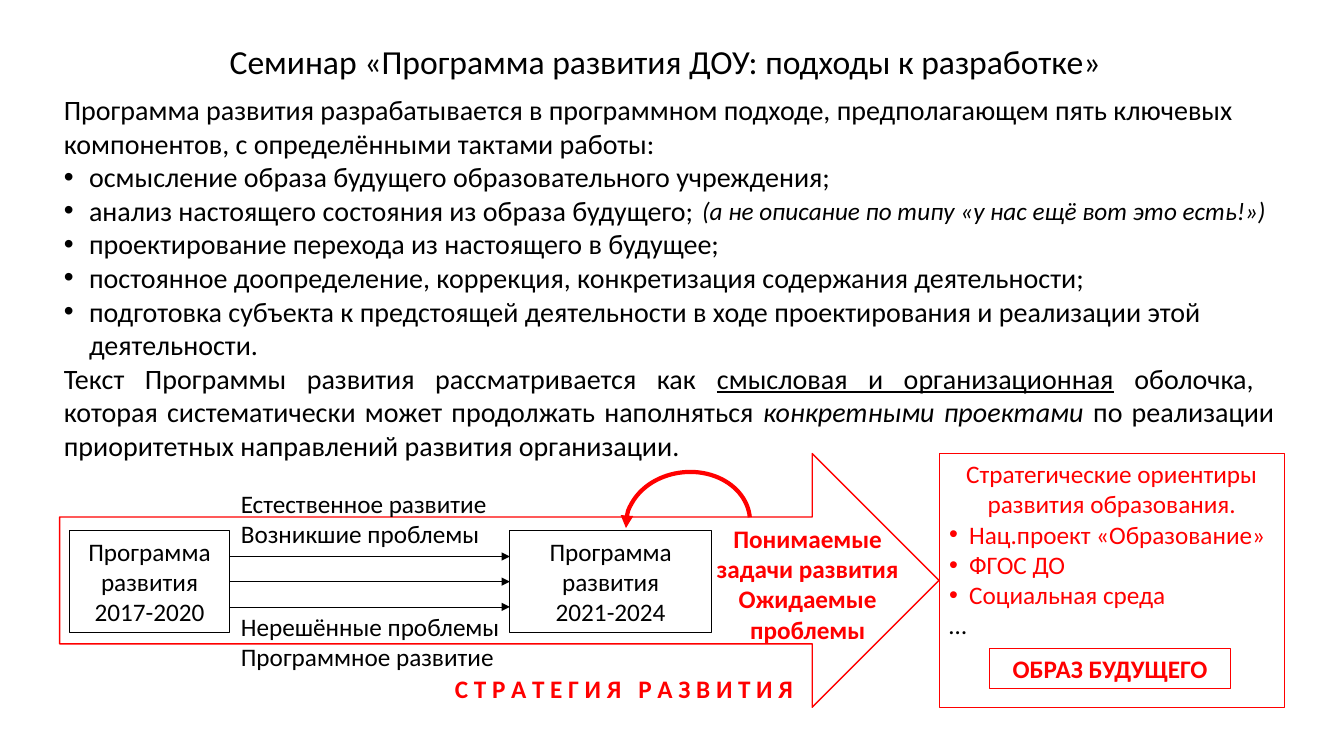
from dataclasses import dataclass

from pptx import Presentation
from pptx.dml.color import RGBColor
from pptx.enum.shapes import MSO_CONNECTOR as Connector, MSO_SHAPE as Preset
from pptx.enum.text import MSO_ANCHOR as Anchor, MSO_AUTO_SIZE as AutoSize, PP_ALIGN as Align
from pptx.oxml.ns import qn
from pptx.util import Inches, Pt
from lxml.etree import SubElement

WIDTH, HEIGHT = Inches(13.33), Inches(7.5)
COLUMNS, ROWS = 160, 90
RIGHT_SIDE, LEFT_SIDE = 3, 1


@dataclass(frozen=True)
class Theme:
    font: str = "Calibri"
    ink: RGBColor = RGBColor(0, 0, 0)
    accent: RGBColor = RGBColor(255, 0, 0)
    title: Pt = Pt(24)
    body: Pt = Pt(20)
    label: Pt = Pt(18)


THEME = Theme()
TITLE = dict(size=THEME.title, color=THEME.ink)
BODY = dict(size=THEME.body, color=THEME.ink)
LABEL = dict(size=THEME.label, color=THEME.ink)
ACCENT = dict(size=THEME.label, color=THEME.accent)
ACCENT_BOLD = dict(ACCENT, bold=True)


@dataclass
class Para:
    """Runs are strings or (string, format) pairs; indent > 0 makes a bullet."""
    runs: list
    align: Align = Align.LEFT
    indent: float = 0
    line_spacing: float = 1.0


def centred(*lines):
    return [Para([line], Align.CENTER) for line in lines]


def bullets(indent, *lines):
    return [Para([line], indent=indent) for line in lines]


def x(column):
    return round(WIDTH * column / COLUMNS)


def y(row):
    return round(HEIGHT * row / ROWS)


def cells(left, top, width, height):
    return x(left), y(top), x(width), y(height)


def set_bullet(paragraph, indent):
    properties = paragraph._p.get_or_add_pPr()
    properties.set("marL", str(Inches(indent)))
    properties.set("indent", str(-Inches(indent)))
    if indent:
        SubElement(properties, qn("a:buFont")).set("typeface", "Arial")
        SubElement(properties, qn("a:buChar")).set("char", "•")
    else:
        SubElement(properties, qn("a:buNone"))


def add_run(paragraph, text, color, **font_format):
    run = paragraph.add_run()
    run.text = text
    run.font.color.rgb = color
    for name, value in dict(font_format, name=THEME.font).items():
        setattr(run.font, name, value)


def write(holder, paras, base, anchor=Anchor.TOP):
    frame = holder.text_frame
    frame_format = dict(word_wrap=True, auto_size=AutoSize.NONE, vertical_anchor=anchor)
    for name, value in frame_format.items():
        setattr(frame, name, value)
    for number, para in enumerate(paras):
        paragraph = frame.add_paragraph() if number else frame.paragraphs[0]
        spacing = dict(alignment=para.align, line_spacing=para.line_spacing,
                       space_before=Pt(0), space_after=Pt(0))
        for name, value in spacing.items():
            setattr(paragraph, name, value)
        set_bullet(paragraph, para.indent)
        for part in para.runs:
            text, extra = (part, {}) if isinstance(part, str) else part
            for index, piece in enumerate(text.split("\n")):
                if index:
                    paragraph.add_line_break()
                add_run(paragraph, piece, **{**base, **extra})


def fill_placeholder(placeholder, area, paras, base, anchor=Anchor.TOP):
    placeholder.left, placeholder.top, placeholder.width, placeholder.height = cells(*area)
    write(placeholder, paras, base, anchor)


def add_text(slide, area, paras, base):
    write(slide.shapes.add_textbox(*cells(*area)), paras, base)


def add_outline(slide, preset, area, color, weight, paras=(), base=LABEL, anchor=Anchor.TOP):
    outline = slide.shapes.add_shape(preset, *cells(*area))
    outline.shadow.inherit = False
    outline.fill.background()
    outline.line.color.rgb = color
    outline.line.width = Pt(weight)
    if paras:
        write(outline, paras, base, anchor)
    return outline


def add_arrowhead(line_owner, end):
    SubElement(line_owner.line._get_or_add_ln(), qn(f"a:{end}")).set("type", "triangle")


def add_arrow(slide, start, finish, row):
    arrow = slide.shapes.add_connector(Connector.STRAIGHT, x(start), y(row), x(finish), y(row))
    arrow.line.color.rgb = THEME.ink
    arrow.line.width = Pt(0.5)
    add_arrowhead(arrow, "tailEnd")
    SubElement(arrow._element.spPr, qn("a:effectLst"))
    return arrow


def add_body(slide):
    items = bullets(
        0.25,
        "осмысление образа будущего образовательного учреждения;",
        "анализ настоящего состояния из образа будущего;",
        "проектирование перехода из настоящего в будущее;",
        "постоянное доопределение, коррекция, конкретизация содержания деятельности;",
        "подготовка субъекта к предстоящей деятельности в ходе проектирования "
        "и реализации этой деятельности.")
    intro = Para(["Программа развития разрабатывается в программном подходе, предполагающем "
                  "пять ключевых компонентов, с определёнными тактами работы:"])
    summary = Para([
        "Текст Программы развития рассматривается как ",
        ("смысловая и организационная", dict(underline=True)),
        " оболочка, \nкоторая систематически может продолжать наполняться ",
        ("конкретными проектами", dict(italic=True)),
        " по реализации приоритетных направлений развития организации."], Align.JUSTIFY)
    fill_placeholder(slide.placeholders[1], (6.4, 10.4, 146.5, 46.7),
                     [intro, *items, summary], BODY)
    add_text(slide, (82.4, 22.7, 71.2, 4.8),
             [Para(["(а не описание по типу «у нас ещё вот это есть!»)"])],
             dict(LABEL, italic=True))


def add_strategy_scheme(slide):
    add_outline(slide, Preset.RIGHT_ARROW, (7.1, 54, 104.7, 30.2), THEME.accent, 1)
    guidelines = [*centred("Стратегические ориентиры развития образования."),
                  *bullets(0.2, "Нац.проект «Образование»", "ФГОС ДО", "Социальная среда"),
                  Para([("…", dict(color=THEME.ink))])]
    add_outline(slide, Preset.RECTANGLE, (111.8, 54, 41.1, 30.2), THEME.accent, 0.75,
                guidelines, ACCENT)

    top, height = 63.2, 12.1
    past_left, past_width, next_left, next_width = 8.3, 19, 60.7, 24
    past, upcoming = [
        add_outline(slide, Preset.RECTANGLE, (left, top, width, height), THEME.ink, 0.75,
                    centred("Программа развития", years))
        for left, width, years in ((past_left, past_width, "2017-2020"),
                                   (next_left, next_width, "2021-2024"))]

    for row, lines in ((57.5, ("Естественное развитие", "Возникшие проблемы")),
                       (72.2, ("Нерешённые проблемы", "Программное развитие"))):
        add_text(slide, (27.5, row, 33.4, 8.5), bullets(0, *lines), LABEL)
    add_text(slide, (83, 61.7, 26.3, 15.7),
             centred("Понимаемые задачи развития Ожидаемые проблемы"), ACCENT_BOLD)

    feedback = add_outline(slide, Preset.ARC, (74.5, 56.2, 14.8, 12.2), THEME.accent, 3)
    feedback.adjustments[0], feedback.adjustments[1] = 108.62, 0
    feedback.rotation = 354.5
    add_arrowhead(feedback, "headEnd")

    middle = top + height / 2
    for offset in (-3, 0, 3):
        arrow = add_arrow(slide, past_left + past_width, next_left, middle + offset)
        if offset == 0:
            arrow.begin_connect(past, RIGHT_SIDE)
            arrow.end_connect(upcoming, LEFT_SIDE)

    add_outline(slide, Preset.RECTANGLE, (117.8, 77.2, 28.7, 4.8), THEME.accent, 0.75,
                centred("ОБРАЗ БУДУЩЕГО"), ACCENT_BOLD, Anchor.MIDDLE)
    add_text(slide, (52, 79.6, 44.6, 4.8),
             centred("С Т Р А Т Е Г И Я   Р А З В И Т И Я"), ACCENT_BOLD)


def main():
    deck = Presentation()
    deck.slide_width, deck.slide_height = WIDTH, HEIGHT
    slide = deck.slides.add_slide(deck.slide_layouts[1])
    heading = Para(["Семинар «Программа развития ДОУ: подходы к разработке» "],
                   Align.CENTER, line_spacing=0.9)
    fill_placeholder(slide.shapes.title, (6.4, 4.8, 146.5, 5.6), [heading], TITLE, Anchor.MIDDLE)
    add_body(slide)
    add_strategy_scheme(slide)
    deck.save("out.pptx")


if __name__ == "__main__":
    main()
